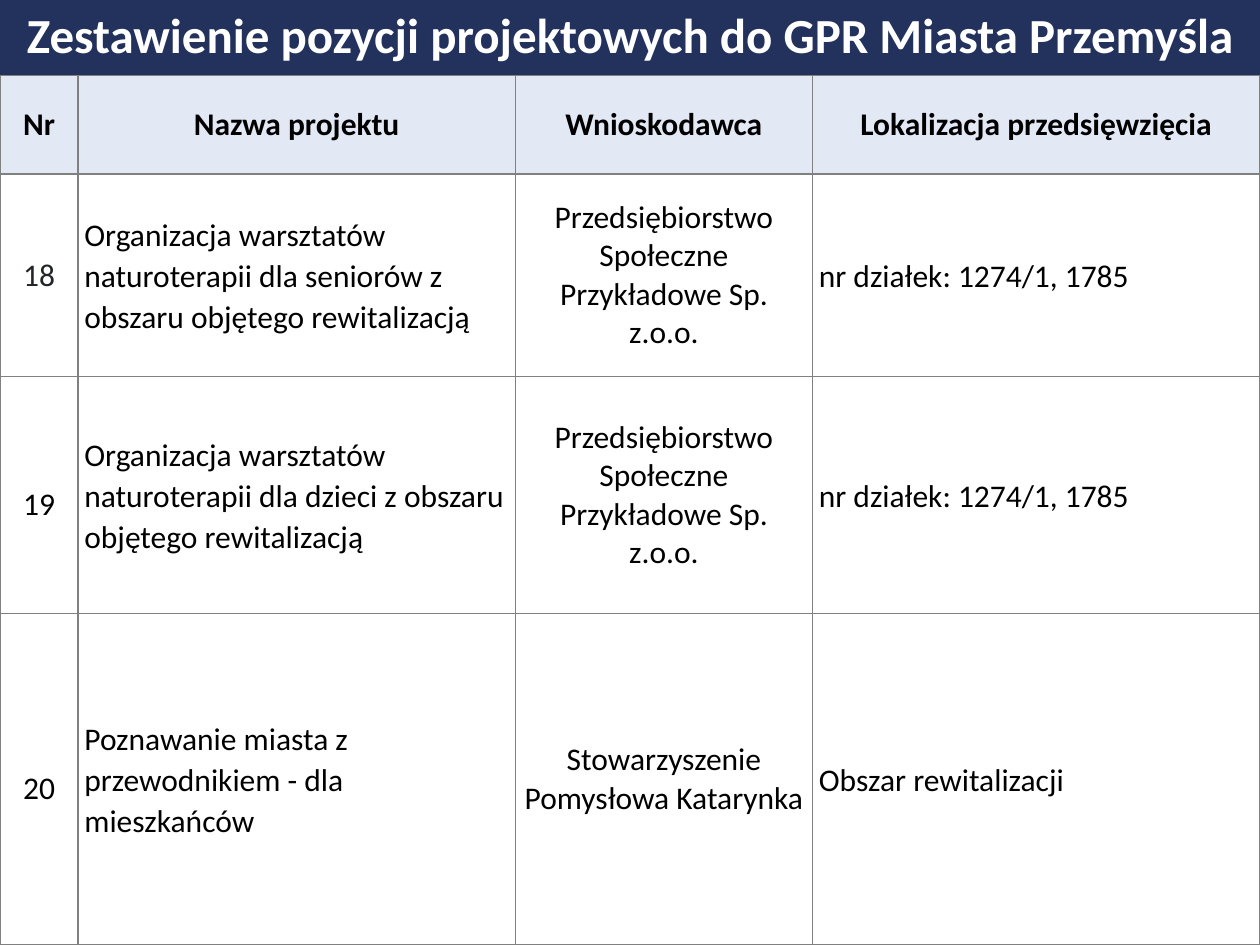
import pptx
import pptx.util
import pptx.dml.color
import pptx.enum.text
import pptx.oxml
import pptx.oxml.ns
from dataclasses import dataclass

Inches, Pt = pptx.util.Inches, pptx.util.Pt
RGB = pptx.dml.color.RGBColor.from_string
ALIGN, ANCHOR = pptx.enum.text.PP_ALIGN, pptx.enum.text.MSO_ANCHOR


@dataclass(frozen=True)
class Theme:
    font: str = "Calibri"
    title_size: int = 28
    table_size: int = 18
    banner: str = "23325D"
    header: str = "E3E8F5"
    paper: str = "FFFFFF"
    ink: str = "000000"
    soft_ink: str = "212529"
    grid: str = "808080"


theme = Theme()


def add_text(paragraph, text, size, color, bold=False):
    run = paragraph.add_run()
    run.text = text
    run.font.name = theme.font
    run.font.size = Pt(size)
    run.font.bold = bold
    run.font.color.rgb = RGB(color)


def add_borders(cell):
    properties = cell._tc.get_or_add_tcPr()
    for side in ("lnL", "lnR", "lnT", "lnB"):
        properties.append(pptx.oxml.parse_xml(
            f'<a:{side} {pptx.oxml.ns.nsdecls("a")} w="{Pt(1)}"><a:solidFill>'
            f'<a:srgbClr val="{theme.grid}"/></a:solidFill></a:{side}>'))


deck = pptx.Presentation()
deck.slide_width, deck.slide_height = Inches(10), Inches(7.5)
slide = deck.slides.add_slide(deck.slide_layouts[5])

# Title banner
banner_height = int(deck.slide_height * 0.08)
banner = slide.shapes.title
banner.left, banner.top = 0, 0
banner.width, banner.height = deck.slide_width, banner_height
banner.fill.solid()
banner.fill.fore_color.rgb = RGB(theme.banner)
banner.text_frame.auto_size = pptx.enum.text.MSO_AUTO_SIZE.NONE
banner.text_frame.vertical_anchor = ANCHOR.MIDDLE
heading = banner.text_frame.paragraphs[0]
heading.alignment = ALIGN.CENTER
heading.line_spacing = 0.9
add_text(heading, "Zestawienie pozycji projektowych do GPR Miasta Przemyśla",
         theme.title_size, theme.paper, bold=True)

# Project table
company = "Przedsiębiorstwo Społeczne Przykładowe Sp. z.o.o."
plots = "nr działek: 1274/1, 1785"
projects = [
    ("Nr", "Nazwa projektu", "Wnioskodawca", "Lokalizacja przedsięwzięcia"),
    ("18", "Organizacja warsztatów naturoterapii dla seniorów z obszaru "
           "objętego rewitalizacją", company, plots),
    ("19", "Organizacja warsztatów naturoterapii dla dzieci z obszaru "
           "objętego rewitalizacją", company, plots),
    ("20", "Poznawanie miasta z przewodnikiem - dla mieszkańców",
     "Stowarzyszenie Pomysłowa Katarynka", "Obszar rewitalizacji"),
]
column_widths = [0.62, 3.47, 2.36, 3.55]
row_heights = [0.78, 1.61, 1.88, 2.63]

table = slide.shapes.add_table(
    len(projects), len(column_widths), 0, banner_height,
    deck.slide_width, deck.slide_height - banner_height).table
for column, width in zip(table.columns, column_widths):
    column.width = Inches(width)
for row, height in zip(table.rows, row_heights):
    row.height = Inches(height)

for r, project in enumerate(projects):
    for c, text in enumerate(project):
        is_header = r == 0
        is_left = not is_header and c in (1, 3)
        is_loose_number = c == 0 and r > 1

        cell = table.cell(r, c)
        add_borders(cell)
        cell.fill.solid()
        cell.fill.fore_color.rgb = RGB(theme.header if is_header else theme.paper)
        cell.vertical_anchor = ANCHOR.MIDDLE
        cell.margin_left = cell.margin_right = Inches(0.05 if is_left else 0.07)
        cell.margin_top = cell.margin_bottom = 0

        paragraph = cell.text_frame.paragraphs[0]
        paragraph.alignment = ALIGN.LEFT if is_left else ALIGN.CENTER
        if is_loose_number:
            paragraph.line_spacing = 1.5
        else:
            paragraph.space_before = paragraph.space_after = Pt(6)
            if is_left:
                paragraph.line_spacing = 1.07
        color = theme.soft_ink if (r, c) == (1, 0) else theme.ink
        add_text(paragraph, text, theme.table_size, color, bold=is_header)

deck.save("out.pptx")
